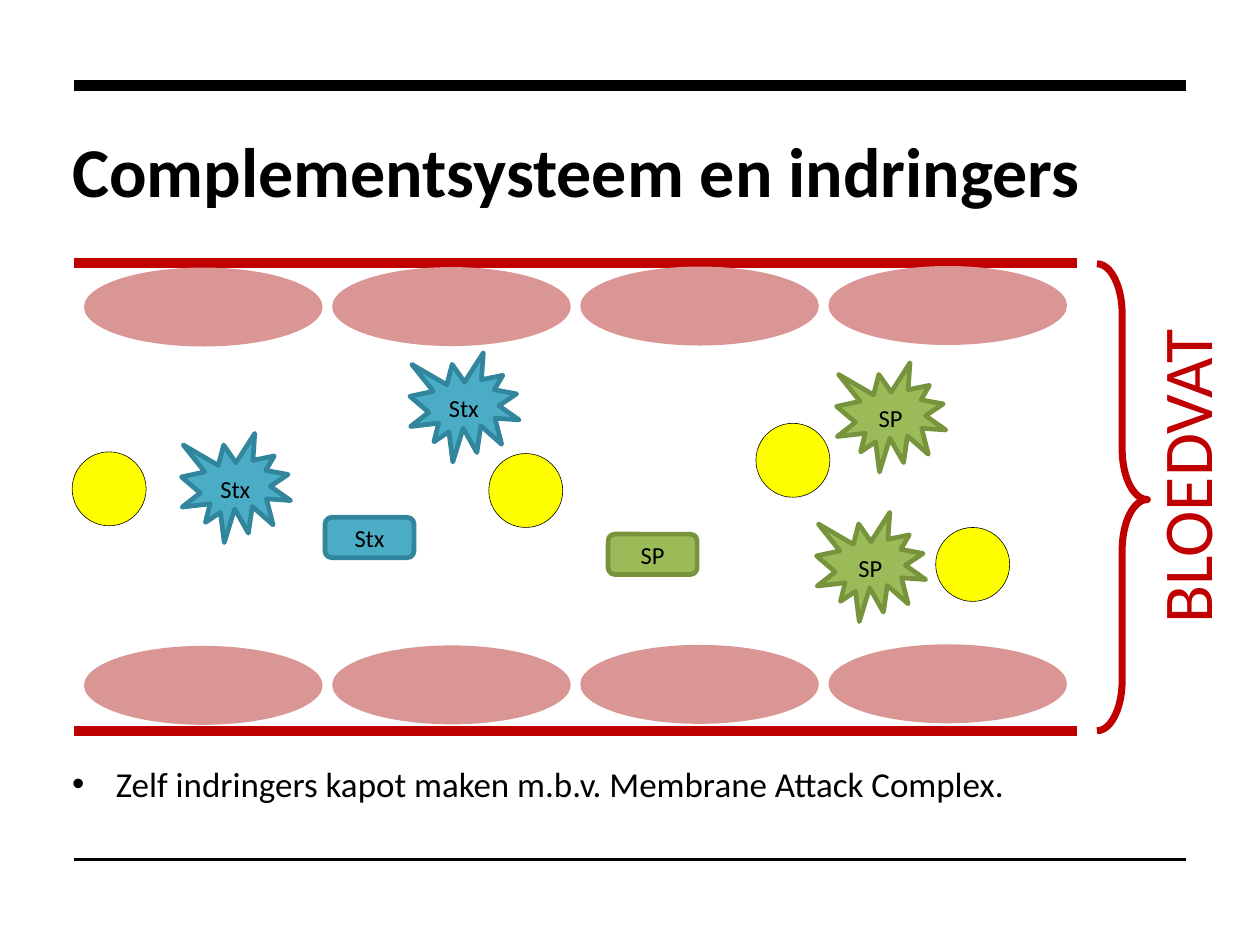
from lxml.etree import SubElement
from pptx import Presentation
from pptx.dml.color import RGBColor
from pptx.enum.shapes import MSO_CONNECTOR, MSO_SHAPE as Preset
from pptx.enum.text import MSO_ANCHOR as Anchor, PP_ALIGN as Align
from pptx.oxml.ns import qn
from pptx.util import Inches, Pt

COLORS = {
    "ink": "000000", "vessel": "C00000", "cell": "D99694", "defender": "FFFF00",
    "Stx": "4BACC6", "Stx edge": "31859C", "SP": "9BBB59", "SP edge": "77933C",
}
FONT = "Calibri"
COLUMNS, ROWS = 75, 56.25
UNIT = Inches(0.1)
CELL_PITCH, CELL_SLOPE = 14.77, -0.03
SEALS = [("Stx", 10.8, 25.8), ("Stx", 24.4, 21), ("SP", 49.8, 21.6), ("SP", 48.6, 30.5)]
FRAGMENTS = [("Stx", 19.35, 30.8), ("SP", 36.2, 31.8)]
DEFENDERS = [(4.3, 26.9), (45, 25.2), (29.1, 27), (55.7, 31.4)]


def grid(*cells):
    """Convert columns and rows to slide lengths."""
    return [round(cell * UNIT) for cell in cells]


def color(name):
    """Look up a palette colour."""
    return RGBColor.from_string(COLORS[name])


def style_text(paragraph, size, ink="ink", bold=False):
    """Set the font of a whole paragraph."""
    font = paragraph.font
    font.name, font.size, font.bold = FONT, Pt(size), bold
    font.color.rgb = color(ink)


def clear_insets(frame):
    """Remove the inner margins of a text frame."""
    frame.margin_left = frame.margin_right = frame.margin_top = frame.margin_bottom = 0


def add_rule(slide, row, right, ink, weight):
    """Draw a horizontal rule from the left margin."""
    rule = slide.shapes.add_connector(MSO_CONNECTOR.STRAIGHT, *grid(4.4, row, right, row))
    rule.line.color.rgb, rule.line.width = color(ink), Pt(weight)
    SubElement(rule._element.spPr, qn("a:effectLst"))


def add_figure(slide, preset, box, fill=None, edge=None, weight=2):
    """Draw a preset shape with optional fill and outline."""
    figure = slide.shapes.add_shape(preset, *grid(*box))
    figure.shadow.inherit = False
    if fill:
        figure.fill.solid()
        figure.fill.fore_color.rgb = color(fill)
    else:
        figure.fill.background()
    if edge:
        figure.line.color.rgb, figure.line.width = color(edge), Pt(weight)
    else:
        figure.line.fill.background()
    return figure


def add_invader(slide, preset, kind, box, label_drop=0):
    """Draw a labelled invader in the colours of its kind."""
    frame = add_figure(slide, preset, box, kind, f"{kind} edge").text_frame
    clear_insets(frame)
    frame.margin_top = round(2 * label_drop * UNIT)
    frame.word_wrap, frame.vertical_anchor = False, Anchor.MIDDLE
    label = frame.paragraphs[0]
    label.text, label.alignment = kind, Align.CENTER
    style_text(label, 10.5)


def add_text(slide, box, words):
    """Add a one-paragraph text box and return its frame and paragraph."""
    frame = slide.shapes.add_textbox(*grid(*box)).text_frame
    clear_insets(frame)
    frame.word_wrap = True
    frame.paragraphs[0].text = words
    return frame, frame.paragraphs[0]


def add_title(slide):
    """Add the slide heading."""
    frame, heading = add_text(slide, (4.3, 8.2, 66.4, 4.4), "Complementsysteem en indringers")
    frame.vertical_anchor = Anchor.MIDDLE
    heading.line_spacing = Pt(31.5)
    style_text(heading, 30, bold=True)


def add_bullet(slide):
    """Add the bulleted explanation under the vessel."""
    words = "Zelf indringers kapot maken m.b.v. Membrane Attack Complex."
    _, point = add_text(slide, (4.3, 45.3, 66.4, 2.6), words)
    point.line_spacing = Pt(18.8)
    properties = point._p.get_or_add_pPr()
    indent = Inches(0.26)
    properties.set("marL", str(indent))
    properties.set("indent", str(-indent))
    SubElement(properties, qn("a:buFont"), typeface="Arial")
    SubElement(properties, qn("a:buChar"), char="•")
    style_text(point, 15)


def add_vessel(slide):
    """Draw the vessel walls, their cells, the brace and its name."""
    for wall_row, cell_row in ((15.65, 15.93), (43.5, 38.45)):
        add_rule(slide, wall_row, 64.1, "vessel", 4.5)
        for column in range(4):
            left, top = 5 + column * CELL_PITCH, cell_row + column * CELL_SLOPE
            add_figure(slide, Preset.OVAL, (left, top, 14.2, 4.7), "cell")
    brace = add_figure(slide, Preset.RIGHT_BRACE, (65.3, 15.7, 3, 27.8), edge="vessel", weight=3)
    brace.adjustments[0], brace.adjustments[1] = 1, 0.505
    frame, name = add_text(slide, (68, 18.5, 5.1, 19.7), "BLOEDVAT")
    frame._txBody.bodyPr.set("vert", "vert270")
    name.alignment = Align.CENTER
    style_text(name, 30, "vessel")


def main():
    """Build and save the slide."""
    deck = Presentation()
    deck.slide_width, deck.slide_height = grid(COLUMNS, ROWS)
    slide = deck.slides.add_slide(deck.slide_layouts[6])
    add_rule(slide, 5.1, 70.6, "ink", 4.5)
    add_rule(slide, 51.15, 70.6, "ink", 1.5)
    add_title(slide)
    add_vessel(slide)
    for left, top in DEFENDERS:
        add_figure(slide, Preset.OVAL, (left, top, 4.4, 4.4), "defender", "ink", 0.25)
    for kind, left, top in SEALS:
        add_invader(slide, Preset.EXPLOSION1, kind, (left, top, 6.5, 6.5), label_drop=0.25)
    for kind, left, top in FRAGMENTS:
        add_invader(slide, Preset.ROUNDED_RECTANGLE, kind, (left, top, 5.3, 2.4))
    add_bullet(slide)
    deck.save("out.pptx")


if __name__ == "__main__":
    main()
